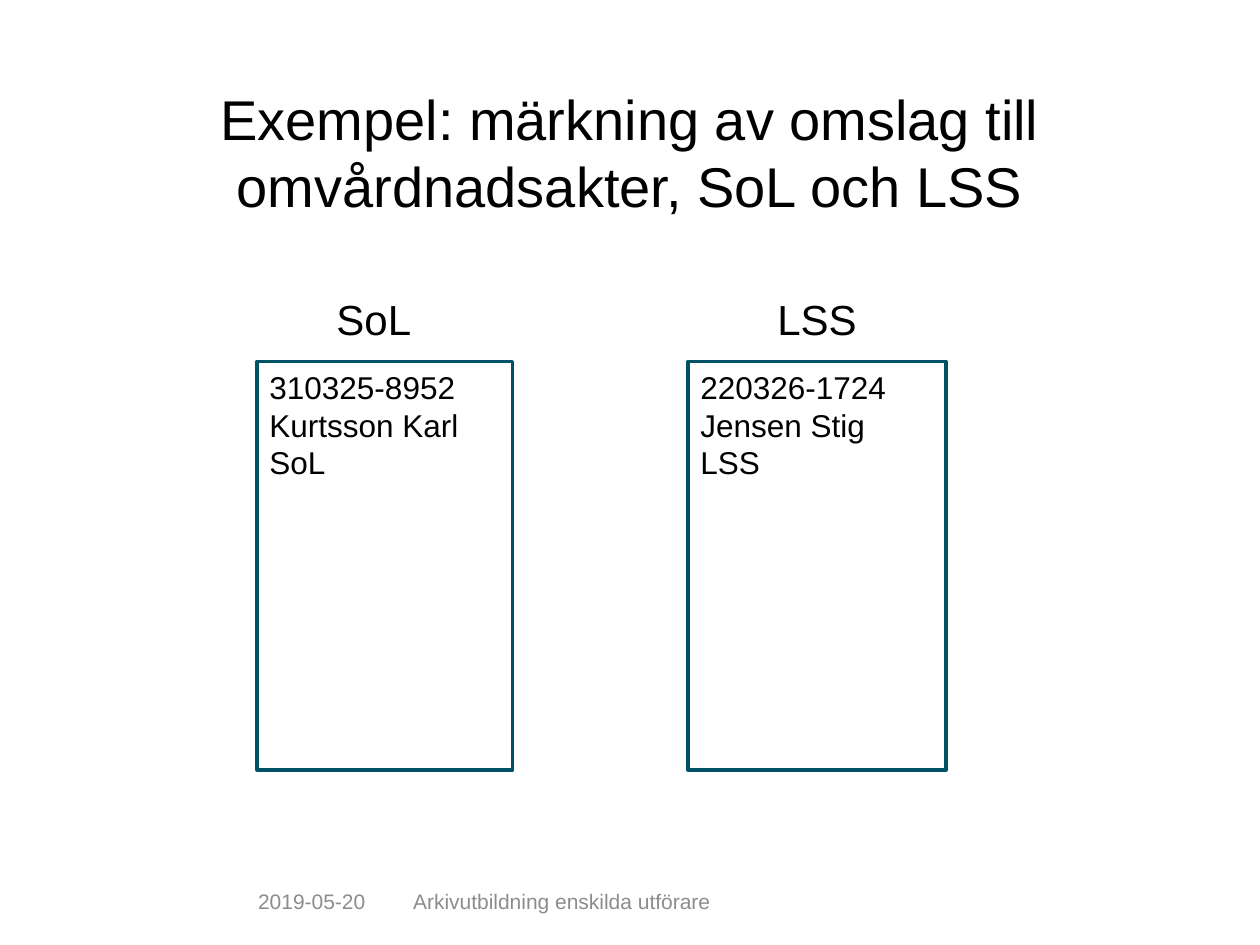
import pptx
import pptx.util
import pptx.dml.color
import pptx.enum.shapes
import pptx.enum.text
import pptx.oxml.ns
from lxml import etree

In, Pt = pptx.util.Inches, pptx.util.Pt
ALIGN = pptx.enum.text.PP_ALIGN
ANCHOR = pptx.enum.text.MSO_ANCHOR

W, H = 10, 7.5
BLACK, GREY, WHITE, TEAL = "000000", "8C8C8C", "FFFFFF", "005365"
TITLE = "Exempel: märkning av omslag till omvårdnadsakter, SoL och LSS"
HEADING_TABS = [0.65, 4.15]
COVERS = [
    {"heading": "SoL", "left": 2.04, "width": 2.03,
     "label": ["310325-8952", "Kurtsson Karl", "SoL"]},
    {"heading": "LSS", "left": 5.46, "width": 2.05,
     "label": ["220326-1724", "Jensen Stig", "LSS"]},
]
COVER_TOP, COVER_HEIGHT = 2.87, 3.24
FOOTER = [("2019-05-20", 1.23), ("Arkivutbildning enskilda utförare", 3.95)]
FOOTER_LEFT, FOOTER_TOP, FOOTER_HEIGHT = 1.95, 6.95, 0.4


def rgb(value):
    return pptx.dml.color.RGBColor.from_string(value)


def write(sp, lines, size, color=BLACK, align=ALIGN.LEFT, anchor=ANCHOR.TOP, inset=None, tabs=()):
    tf = sp.text_frame
    tf.word_wrap = True
    tf.vertical_anchor = anchor
    if inset is not None:
        for side in ("left", "top", "right", "bottom"):
            setattr(tf, f"margin_{side}", In(inset))
    for i, line in enumerate(lines):
        p = tf.add_paragraph() if i else tf.paragraphs[0]
        p.alignment = align
        if tabs:
            stops = etree.SubElement(p._p.get_or_add_pPr(), pptx.oxml.ns.qn("a:tabLst"))
            for pos in tabs:
                etree.SubElement(stops, pptx.oxml.ns.qn("a:tab"), pos=str(In(pos)), algn="l")
        r = p.add_run()
        r.text = line
        for name, value in {"name": "Arial", "size": Pt(size)}.items():
            setattr(r.font, name, value)
        r.font.color.rgb = rgb(color)


def textbox(s, box, lines, size, **fmt):
    write(s.shapes.add_textbox(*map(In, box)), lines, size, **fmt)


def cover(s, left, width, label):
    sp = s.shapes.add_shape(pptx.enum.shapes.MSO_SHAPE.RECTANGLE,
                            In(left), In(COVER_TOP), In(width), In(COVER_HEIGHT))
    sp.shadow.inherit = False
    sp.fill.solid()
    sp.fill.fore_color.rgb = rgb(WHITE)
    sp.line.color.rgb = rgb(TEAL)
    sp.line.width = Pt(2)
    write(sp, label, 18)


def main():
    prs = pptx.Presentation()
    prs.slide_width, prs.slide_height = In(W), In(H)
    s = prs.slides.add_slide(prs.slide_layouts[6])

    margin = 0.69
    textbox(s, (margin, 0.67, W - 2 * margin, 1.09), [TITLE], 32, align=ALIGN.CENTER, inset=0)
    headings = "".join("\t" + c["heading"] for c in COVERS)
    textbox(s, (2.02, 2.33, 5.75, 4.41), [headings], 24, inset=0, tabs=HEADING_TABS)
    for c in COVERS:
        cover(s, c["left"], c["width"], c["label"])

    left = FOOTER_LEFT
    for text, width in FOOTER:
        textbox(s, (left, FOOTER_TOP, width, FOOTER_HEIGHT), [text], 12,
                color=GREY, anchor=ANCHOR.MIDDLE)
        left += width
    prs.save("out.pptx")


if __name__ == "__main__":
    main()
